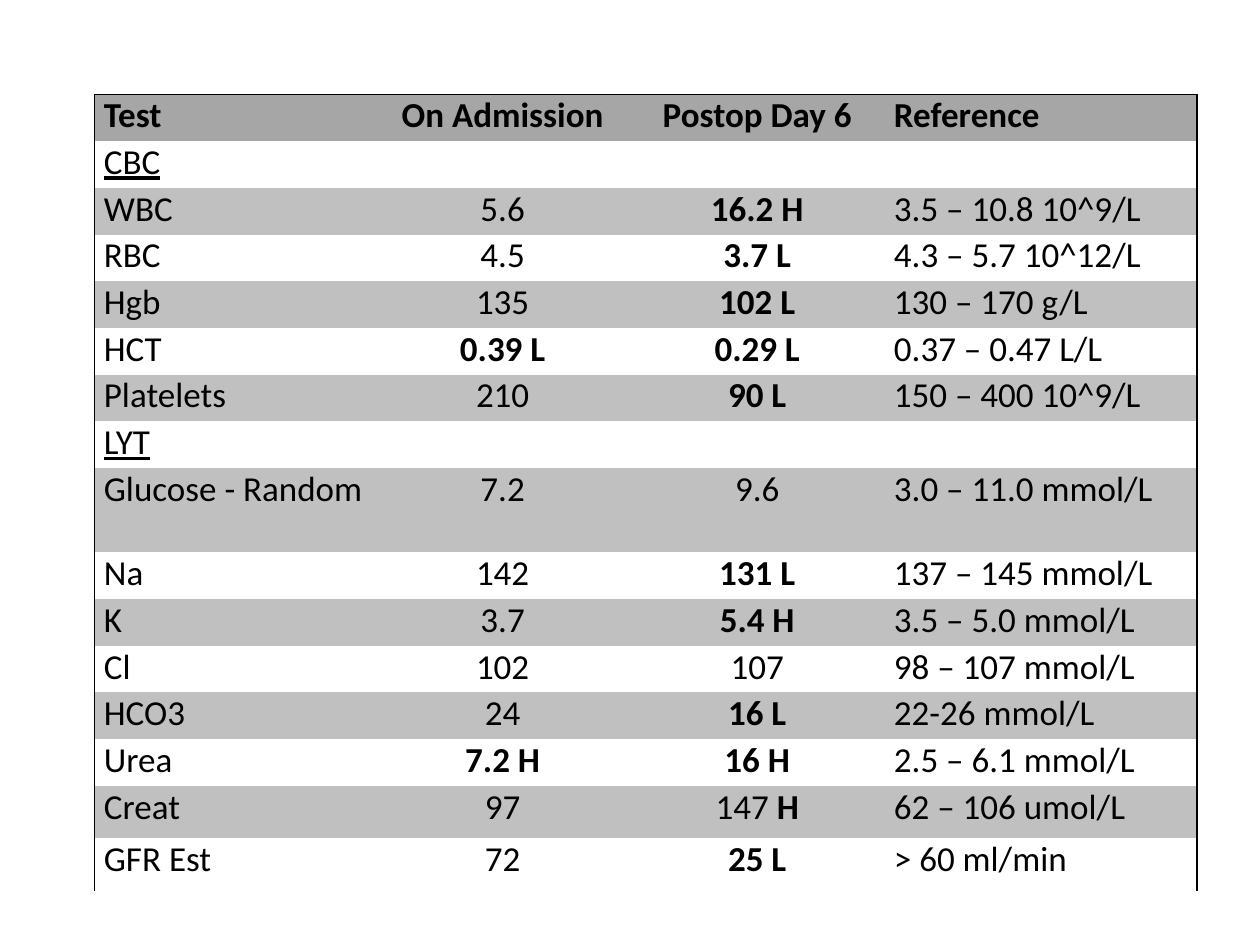
from lxml import etree
from pptx import Presentation
from pptx import util as u
from pptx.dml.color import RGBColor
from pptx.enum import text
from pptx.oxml import ns

Pt = u.Pt
BLACK = RGBColor(0x00, 0x00, 0x00)
HEADER_GRAY = RGBColor(0xA6, 0xA6, 0xA6)
BAND_GRAY = RGBColor(0xC0, 0xC0, 0xC0)

COLUMN_WIDTHS = [160.5, 145.5, 145.5, 178.5]
ROW_HEIGHT = 26.7
SPECIAL_HEIGHTS = {8: 48.2, 14: 30.2, 15: 30.2}
VALUE_COLUMNS = (1, 2)

# A cell is one text, or a tuple of texts where only part is emphasised
LAB_ROWS = [
    ["Test", "On Admission", "Postop Day 6", "Reference"],
    ["CBC"],
    ["WBC", "5.6", "16.2 H", "3.5 – 10.8 10^9/L"],
    ["RBC", "4.5", "3.7 L", "4.3 – 5.7 10^12/L"],
    ["Hgb", "135", "102 L", "130 – 170 g/L"],
    ["HCT", "0.39 L", "0.29 L", "0.37 – 0.47 L/L"],
    ["Platelets", "210", "90 L", "150 – 400 10^9/L"],
    ["LYT"],
    ["Glucose - Random", "7.2", "9.6", "3.0 – 11.0 mmol/L"],
    ["Na", "142", "131 L", "137 – 145 mmol/L"],
    ["K", "3.7", "5.4 H", "3.5 – 5.0 mmol/L"],
    ["Cl", "102", "107", "98 – 107 mmol/L"],
    ["HCO3", "24", "16 L", "22-26 mmol/L"],
    ["Urea", "7.2 H", "16 H", "2.5 – 6.1 mmol/L"],
    ["Creat", "97", ("147", " H"), "62 – 106 umol/L"],
    ["GFR Est", "72", "25 L", "> 60 ml/min"],
]


class SlideBuilder:
    font_format = {"name": "Calibri", "size": Pt(20)}
    cell_format = {"margin_left": Pt(5.4), "margin_right": Pt(5.4),
                   "margin_top": 0, "margin_bottom": 0}

    def __init__(self, slide):
        self.slide = slide

    def apply(self, target, values):
        for name, value in values.items():
            setattr(target, name, value)

    def borders(self, cell, visible):
        """Draw the visible sides in black and hide the others."""
        properties = cell._tc.get_or_add_tcPr()
        for side in "LRTB":
            line = etree.SubElement(properties, ns.qn(f"a:ln{side}"), w=str(Pt(1)))
            if side in visible:
                fill = etree.SubElement(line, ns.qn("a:solidFill"))
                etree.SubElement(fill, ns.qn("a:srgbClr"), val=str(BLACK))
            else:
                etree.SubElement(line, ns.qn("a:noFill"))

    def cell(self, cell, content, fill, visible, centered, run_format):
        self.apply(cell, self.cell_format)
        self.borders(cell, visible)
        if fill is None:
            cell.fill.background()
        else:
            cell.fill.solid()
            cell.fill.fore_color.rgb = fill
        paragraph = cell.text_frame.paragraphs[0]
        if centered:
            paragraph.alignment = text.PP_ALIGN.CENTER
        for part in (content if isinstance(content, tuple) else (content,)):
            if part:
                run = paragraph.add_run()
                run.text = part
                self.apply(run.font, {**self.font_format, **run_format(part)})
                run.font.color.rgb = BLACK

    def lab_table(self, left, top, rows):
        heights = [SPECIAL_HEIGHTS.get(i, ROW_HEIGHT) for i in range(len(rows))]
        last = len(COLUMN_WIDTHS) - 1
        table = self.slide.shapes.add_table(
            len(rows), len(COLUMN_WIDTHS), Pt(left), Pt(top),
            Pt(sum(COLUMN_WIDTHS)), Pt(sum(heights))).table
        self.apply(table, {"first_row": False, "horz_banding": False})
        for column, width in zip(table.columns, COLUMN_WIDTHS):
            column.width = Pt(width)

        for i, contents in enumerate(rows):
            table.rows[i].height = Pt(heights[i])
            header, section = i == 0, len(contents) == 1
            fill = HEADER_GRAY if header else BAND_GRAY if i % 2 == 0 else None
            for j in range(len(COLUMN_WIDTHS)):
                is_value = j in VALUE_COLUMNS
                visible = "T" * header + "L" * (j == 0) + "R" * (j == last)

                # Headings and abnormal (H or L) results are bold
                def run_format(part):
                    abnormal = is_value and part.endswith(("H", "L"))
                    return {"bold": header or abnormal, "underline": section}

                content = contents[j] if j < len(contents) else ""
                self.cell(table.cell(i, j), content, fill, visible,
                          is_value, run_format)


def main():
    presentation = Presentation()
    presentation.slide_width, presentation.slide_height = Pt(720), Pt(540)
    slide = presentation.slides.add_slide(presentation.slide_layouts[6])

    # Laboratory results
    SlideBuilder(slide).lab_table(54, 54, LAB_ROWS)
    presentation.save("out.pptx")


if __name__ == "__main__":
    main()
